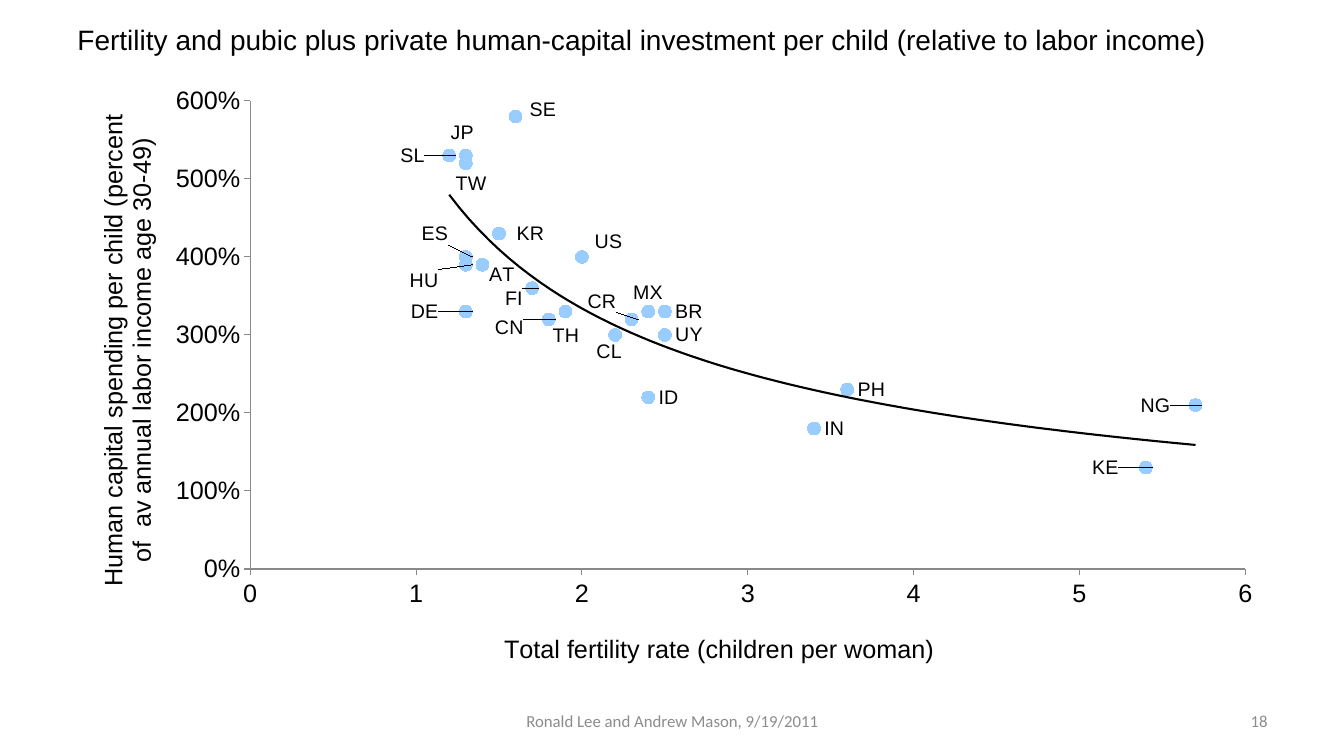
from lxml import etree
from pptx import Presentation, util as u
from pptx.chart.data import XyChartData
from pptx.dml.color import RGBColor
from pptx.enum import chart as ch, text as tx
from pptx.oxml import parse_xml
from pptx.oxml.ns import nsdecls, qn

# Content
HEAD = ("Fertility and pubic plus private human-capital investment "
        "per child (relative to labor income)")
FOOT = "Ronald Lee and Andrew Mason, 9/19/2011"
PAGE = "18"
X_NAME = "Total fertility rate (children per woman)"
Y_NAME = ("Human capital spending per child (percent of  av annual "
          "labor income age 30-49)")
SERIES = "Human capital spending"

# Country, fertility, spending, label shift in percent of the chart's size
POINTS = [
    ("KE", 5.4, 1.3, -5.3, 0), ("NG", 5.7, 2.1, -5.4, 0),
    ("IN", 3.4, 1.8, 0, 0), ("ID", 2.4, 2.2, 0, 0),
    ("JP", 1.3, 5.3, -2.1, -3.8), ("PH", 3.6, 2.3, 0, 0),
    ("KR", 1.5, 4.3, 0.6, 0), ("TW", 1.3, 5.2, -1.7, 3.3),
    ("TH", 1.9, 3.3, -1.9, 4), ("BR", 2.5, 3, 0, -2),
    ("CL", 2.2, 3, -2.4, 2.8), ("CR", 2.3, 3.2, -4.5, -3),
    ("MX", 2.4, 3.3, -2.1, -3.1), ("UY", 2.5, 3.3, 0, 0),
    ("AT", 1.4, 3.9, -0.3, 1.7), ("FI", 1.7, 3.6, -3.1, 1.8),
    ("DE", 1.3, 3.3, -5.4, 0), ("HU", 1.3, 3.9, -5.5, 2.6),
    ("SL", 1.2, 5.3, -4.9, 0), ("ES", 1.3, 4, -4.5, -3.8),
    ("SE", 1.6, 5.8, 0.3, -1.2), ("US", 2, 4, 0.2, -2.5),
    ("CN", 1.8, 3.2, -5.3, 1.3),
]
# Spending at fertility 2.5 is higher for BR than for UY
POINTS[9] = ("BR", 2.5, 3.3, 0, 0)
POINTS[13] = ("UY", 2.5, 3, 0, 0)


class Theme:
    font, foot = "Arial", "Calibri"
    ink, grey, axis, dot = "000000", "8C8C8C", "898989", "99CCFF"
    head, body, label, small = 20, 18, 14, 12


def style(font, size, color=Theme.ink, name=Theme.font):
    font.size, font.name, font.bold = u.Pt(size), name, False
    font.color.rgb = RGBColor.from_string(color)


def place(after, x, y, w=None, h=None):
    """Set a manual layout, in percent of the chart's size."""
    parts = [("layoutTarget", "inner")] if w else []
    if w or after.tag != qn("c:idx"):
        parts += [("xMode", "edge"), ("yMode", "edge")]
    sizes = [("x", x), ("y", y), ("w", w), ("h", h)]
    parts += [(k, round(v / 100, 4)) for k, v in sizes if v is not None]
    for old in after.getparent().findall(qn("c:layout")):
        after.getparent().remove(old)
    layout = parse_xml(f"<c:layout {nsdecls('c')}/>")
    box = etree.SubElement(layout, qn("c:manualLayout"))
    for key, val in parts:
        etree.SubElement(box, qn("c:" + key)).set("val", str(val))
    if w:
        after.addprevious(layout)
    else:
        after.addnext(layout)


def write(slide, box, words, size, color, name, align, anchor):
    shape = slide.shapes.add_textbox(*[u.Inches(n) for n in box])
    frame = shape.text_frame
    frame.word_wrap, frame.vertical_anchor = True, anchor
    para = frame.paragraphs[0]
    para.text, para.alignment = words, align
    style(para.runs[0].font, size, color, name)


deck = Presentation()
deck.slide_width, deck.slide_height = u.Inches(13.33), u.Inches(7.5)
slide = deck.slides.add_slide(deck.slide_layouts[6])

# Heading
write(slide, (0.67, 0.17, 11.44, 0.44), HEAD, Theme.head, Theme.ink,
      Theme.font, tx.PP_ALIGN.LEFT, tx.MSO_ANCHOR.TOP)

# Scatter chart
data = XyChartData(number_format="0%")
line = data.add_series(SERIES)
for _, rate, spend, _, _ in POINTS:
    line.add_data_point(rate, spend)
frame = slide.shapes.add_chart(
    ch.XL_CHART_TYPE.XY_SCATTER, *[u.Inches(n) for n in (0.67, 0.75, 12, 6)],
    data)
chart = frame.chart
chart.has_legend = chart.has_title = False
style(chart.font, Theme.body)
plot = chart.plots[0]
plot.vary_by_categories = False

# Axes: name, limit, step, number format, title corner
axes = [(chart.category_axis, X_NAME, 6, 1, "0", (35.7, 91.3)),
        (chart.value_axis, Y_NAME, 6, 1, "0%", (2, 5.7))]
for axis, name, top, step, code, spot in axes:
    axis.minimum_scale, axis.maximum_scale, axis.major_unit = 0, top, step
    axis.has_major_gridlines = False
    axis.major_tick_mark = ch.XL_TICK_MARK.OUTSIDE
    axis.minor_tick_mark = ch.XL_TICK_MARK.NONE
    axis.tick_labels.number_format = code
    axis.tick_labels.number_format_is_linked = False
    style(axis.tick_labels.font, Theme.body)
    axis.format.line.color.rgb = RGBColor.from_string(Theme.axis)
    axis.format.line.width = u.Pt(0.75)
    title = axis.axis_title.text_frame
    title.text = name
    style(title.paragraphs[0].runs[0].font, Theme.body)
    place(axis.axis_title._element.find(qn("c:tx")), *spot)
    if axis is chart.value_axis:
        turn = title._txBody.find(qn("a:bodyPr"))
        turn.set("rot", "-5400000")
        turn.set("vert", "horz")

# Markers
series = plot.series[0]
series.smooth = False
series.format.line.fill.background()
mark = series.marker
mark.style, mark.size = ch.XL_MARKER_STYLE.CIRCLE, 9
mark.format.fill.solid()
mark.format.fill.fore_color.rgb = RGBColor.from_string(Theme.dot)
mark.format.line.fill.background()

# Country labels
for i, (code, _, _, dx, dy) in enumerate(POINTS):
    label = series.points[i].data_label
    label.text_frame.text = code
    style(label.text_frame.paragraphs[0].runs[0].font, Theme.label)
    label.position = ch.XL_LABEL_POSITION.RIGHT
    if dx or dy:
        item = series._element.find(qn("c:dLbls")).findall(qn("c:dLbl"))[i]
        place(item.find(qn("c:idx")), dx, dy)

# Power trend line
series._element.find(qn("c:xVal")).addprevious(parse_xml(
    f'<c:trendline {nsdecls("c", "a")}><c:spPr><a:ln w="19050"><a:solidFill>'
    f'<a:srgbClr val="{Theme.ink}"/></a:solidFill></a:ln></c:spPr>'
    '<c:trendlineType val="power"/><c:dispRSqr val="0"/>'
    '<c:dispEq val="0"/></c:trendline>'))

# Plot area
place(plot._element, 15.1, 4.2, 82.25, 77.4)

# Footer
for box, words, align in [
        ((4.56, 6.95, 4.22, 0.4), FOOT, tx.PP_ALIGN.CENTER),
        ((9.56, 6.95, 3.11, 0.4), PAGE, tx.PP_ALIGN.RIGHT)]:
    write(slide, box, words, Theme.small, Theme.grey, Theme.foot, align,
          tx.MSO_ANCHOR.MIDDLE)

deck.save("out.pptx")
